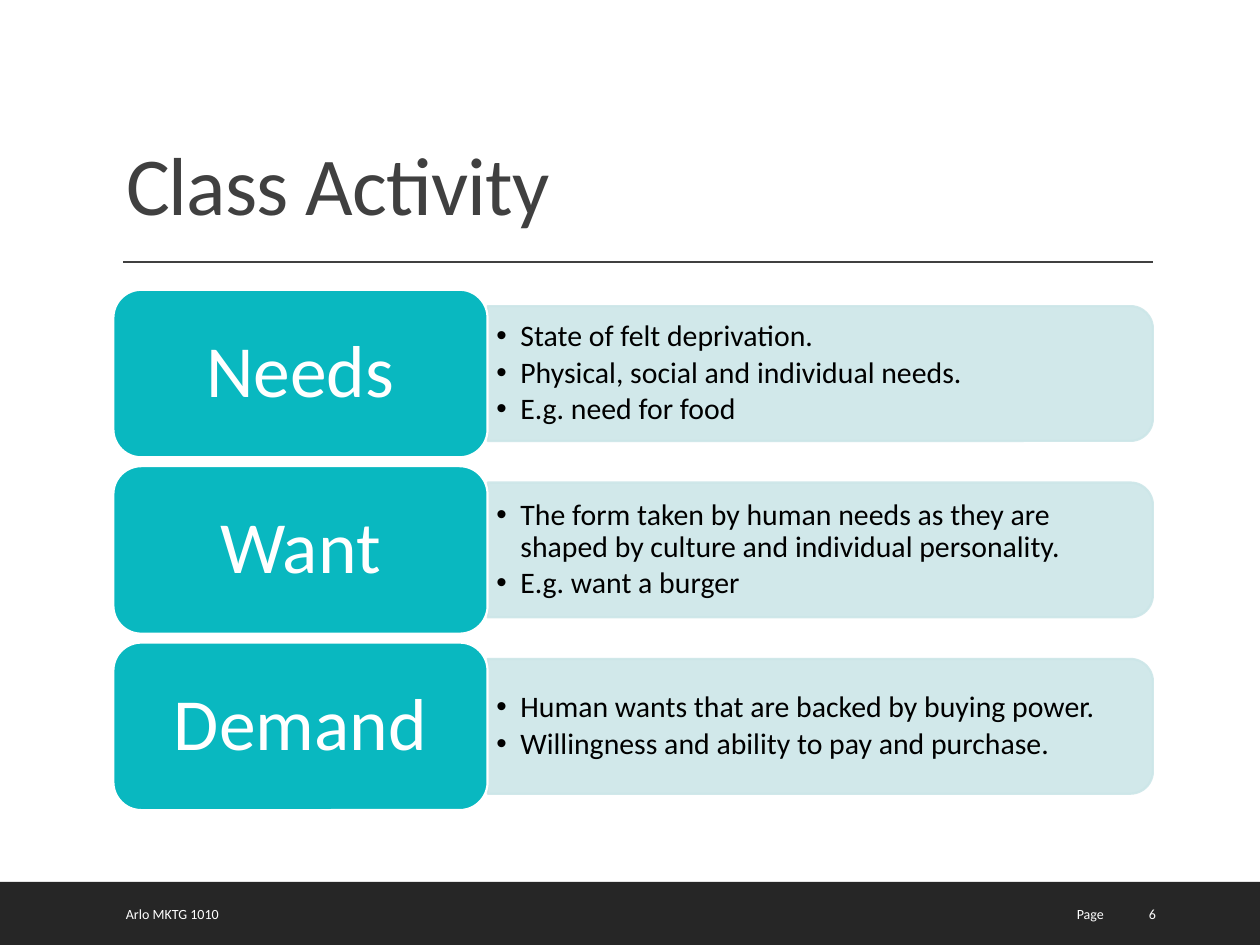
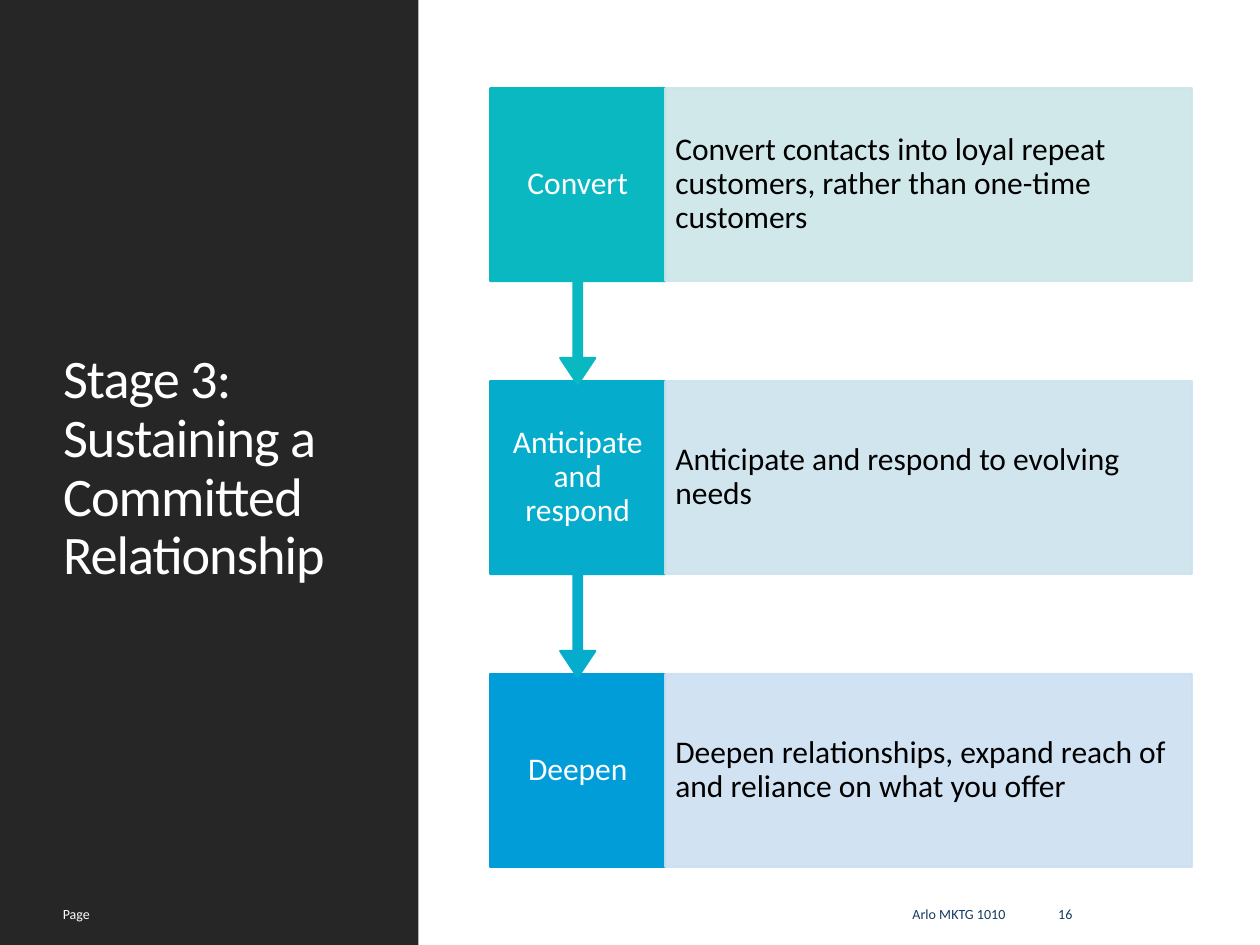
from pptx import Presentation
from pptx.dml.color import RGBColor
from pptx.enum.shapes import MSO_CONNECTOR, MSO_SHAPE
from pptx.enum.text import MSO_ANCHOR as ANCHOR, MSO_AUTO_SIZE, PP_ALIGN as ALIGN
from pptx.oxml.ns import qn
from pptx.util import Inches, Pt
from lxml import etree

FONT = "Calibri"
COURSE = "Arlo MKTG 1010"
DARK = RGBColor(0x26, 0x26, 0x26)
GREY = RGBColor(0x40, 0x40, 0x40)
NAVY = RGBColor(0x15, 0x3A, 0x63)
WHITE = RGBColor(0xFF, 0xFF, 0xFF)
BLACK = RGBColor(0, 0, 0)
TEAL = RGBColor(0x09, 0xB8, 0xC0)
CYAN = RGBColor(0x05, 0xAC, 0xCC)
BLUE = RGBColor(0x00, 0x9D, 0xD9)
PALE_PILL = RGBColor(0xCC, 0xE6, 0xE8)
PALE_TEAL = RGBColor(0xCC, 0xE6, 0xE9)
PALE_CYAN = RGBColor(0xCC, 0xE3, 0xED)
PALE_BLUE = RGBColor(0xCC, 0xDF, 0xF1)

TERMS = [
    ("Needs", ["State of felt deprivation.",
               "Physical, social and individual needs.",
               "E.g. need for food"]),
    ("Want", ["The form taken by human needs as they are shaped by culture "
              "and individual personality.",
              "E.g. want a burger"]),
    ("Demand", ["Human wants that are backed by buying power.",
                "Willingness and ability to pay and purchase."]),
]
STEPS = [
    ("Convert", "Convert contacts into loyal repeat customers, rather than "
     "one-time customers", TEAL, PALE_TEAL),
    ("Anticipate and respond", "Anticipate and respond to evolving needs",
     CYAN, PALE_CYAN),
    ("Deepen", "Deepen relationships, expand reach of and reliance on what "
     "you offer", BLUE, PALE_BLUE),
]


def add_box(s, kind, box, fill, line=None, see_through=False):
    """Add a flat shape; box is left, top, width, height in inches."""
    sp = s.shapes.add_shape(kind, *map(Inches, box))
    sp.shadow.inherit = False
    sp.fill.solid()
    sp.fill.fore_color.rgb = fill
    if line is None:
        sp.line.fill.background()
    else:
        sp.line.color.rgb = line
        sp.line.width = Pt(1.25)
    if see_through:
        for clr in sp._element.spPr.iter(qn("a:srgbClr")):
            etree.SubElement(clr, qn("a:alpha"), val="90000")
    return sp


def write(sp, lines, size, color, align=ALIGN.LEFT, anchor=ANCHOR.MIDDLE,
          insets=(0.1, 0.05), spacing=0.9):
    """Fill a shape with one run per paragraph and return the paragraphs."""
    tf = sp.text_frame
    tf.word_wrap = True
    tf.auto_size = MSO_AUTO_SIZE.NONE
    tf.vertical_anchor = anchor
    tf.margin_left = tf.margin_right = Inches(insets[0])
    tf.margin_top = tf.margin_bottom = Inches(insets[1])
    for i, text in enumerate(lines):
        p = tf.add_paragraph() if i else tf.paragraphs[0]
        p.alignment = align
        p.line_spacing = spacing
        r = p.add_run()
        r.text = text
        r.font.name = FONT
        r.font.size = Pt(size)
        r.font.color.rgb = color
    return tf.paragraphs


def add_text(s, box, lines, size, color, **style):
    return write(s.shapes.add_textbox(*map(Inches, box)), lines, size, color, **style)


def set_title(s, box, text, size, color, anchor):
    title = s.shapes.title
    title.left, title.top, title.width, title.height = map(Inches, box)
    for p in write(title, [text], size, color, anchor=anchor):
        p.runs[0].font._element.set("spc", "-50")


def add_footer(s, parts):
    """Add small footer texts given as (left, width, text, colour, alignment)."""
    for left, width, text, color, align in parts:
        add_text(s, (left, 7.05, width, 0.4), [text], 8, color, align=align, spacing=1.0)


def add_bullets(paragraphs):
    for p in paragraphs:
        p.space_after = Pt(2.5)
        pPr = p._p.get_or_add_pPr()
        pPr.set("marL", str(Inches(0.19)))
        pPr.set("indent", str(-Inches(0.19)))
        etree.SubElement(pPr, qn("a:buFont"), typeface="Arial")
        etree.SubElement(pPr, qn("a:buChar"), char="•")


def add_term(s, box, term, points):
    """A label tile on the left with a bulleted pill, rounded at its right end."""
    left, top, width, height = box
    tile_w, pill_h = 2.97, 1.07
    pill_w = width - tile_w
    pill_x, middle = left + tile_w, top + height / 2
    # The pill is turned by 90 degrees, so it is laid out upright around its centre.
    upright = (pill_x + (pill_w - pill_h) / 2, middle - pill_w / 2, pill_h, pill_w)
    pill = add_box(s, MSO_SHAPE.ROUND_2_SAME_RECTANGLE, upright, PALE_PILL, PALE_PILL, True)
    pill.rotation = 90
    add_bullets(add_text(s, (pill_x, middle - 0.48, pill_w - 0.05, 0.96), points,
                         17, BLACK, insets=(0.07, 0.04)))
    tile = add_box(s, MSO_SHAPE.ROUNDED_RECTANGLE, (left, top, tile_w, height), TEAL, WHITE)
    write(tile, [term], 42, WHITE, align=ALIGN.CENTER, insets=(0.17, 0.09))


def add_step(s, box, step, is_last):
    """A label square, with an arrow down to the next one, beside its explanation."""
    left, top, width, height = box
    label, text, color, pale = step
    label_w, callout_h = 1.39, 2.35
    if is_last:
        sp = add_box(s, MSO_SHAPE.RECTANGLE, (left, top, label_w, height), color, color)
    else:
        sp = add_box(s, MSO_SHAPE.DOWN_ARROW_CALLOUT, (left, top, label_w, callout_h),
                     color, color)
        for i, value in enumerate((0.05, 0.1, 0.15, height / callout_h)):
            sp.adjustments[i] = value
    write(sp, [label], 18, WHITE, align=ALIGN.CENTER, insets=(0.1, 0.14))
    panel = add_box(s, MSO_SHAPE.RECTANGLE, (left + label_w, top, width - label_w, height),
                    pale, pale, True)
    write(panel, [text], 18, BLACK, insets=(0.08, 0.25))


def build_terms_slide(s):
    add_box(s, MSO_SHAPE.RECTANGLE, (0, 7, 10, 0.5), DARK)
    rule = s.shapes.add_connector(MSO_CONNECTOR.STRAIGHT, Inches(0.98), Inches(2.08),
                                  Inches(9.15), Inches(2.08))
    rule.line.color.rgb = GREY
    rule.line.width = Pt(1)
    etree.SubElement(rule._element.spPr, qn("a:effectLst"))
    set_title(s, (0.9, 0.31, 8.25, 1.59), "Class Activity", 47, GREY, ANCHOR.BOTTOM)
    add_footer(s, [(0.9, 5.59, COURSE, WHITE, ALIGN.LEFT),
                   (6.74, 2.12, "Page", WHITE, ALIGN.RIGHT),
                   (9.02, 0.64, "6", WHITE, ALIGN.LEFT)])
    for i, (term, points) in enumerate(TERMS):
        add_term(s, (0.9, 2.3 + 1.4 * i, 8.25, 1.33), term, points)


def build_steps_slide(s):
    side = add_box(s, MSO_SHAPE.RECTANGLE, (0, 0, 3.32, 7.5), DARK)
    s.shapes.title._element.addprevious(side._element)
    set_title(s, (0.4, 0.57, 2.53, 6.31), "Stage 3: Sustaining a Committed Relationship",
              31, WHITE, ANCHOR.MIDDLE)
    add_footer(s, [(0.4, 1.42, "Page", WHITE, ALIGN.LEFT),
                   (3.89, 4.19, COURSE, NAVY, ALIGN.RIGHT),
                   (8.3, 0.89, "16", NAVY, ALIGN.LEFT)])
    last = len(STEPS) - 1
    for i in range(last, -1, -1):  # bottom up, so each arrow tip overlaps the next square
        add_step(s, (3.89, 0.7 + 2.325 * i, 5.57, 1.53), STEPS[i], i == last)


def main():
    prs = Presentation()
    prs.slide_width, prs.slide_height = Inches(10), Inches(7.5)
    title_only = prs.slide_layouts[5]
    for build in (build_terms_slide, build_steps_slide):
        build(prs.slides.add_slide(title_only))
    prs.save("out.pptx")


if __name__ == "__main__":
    main()
